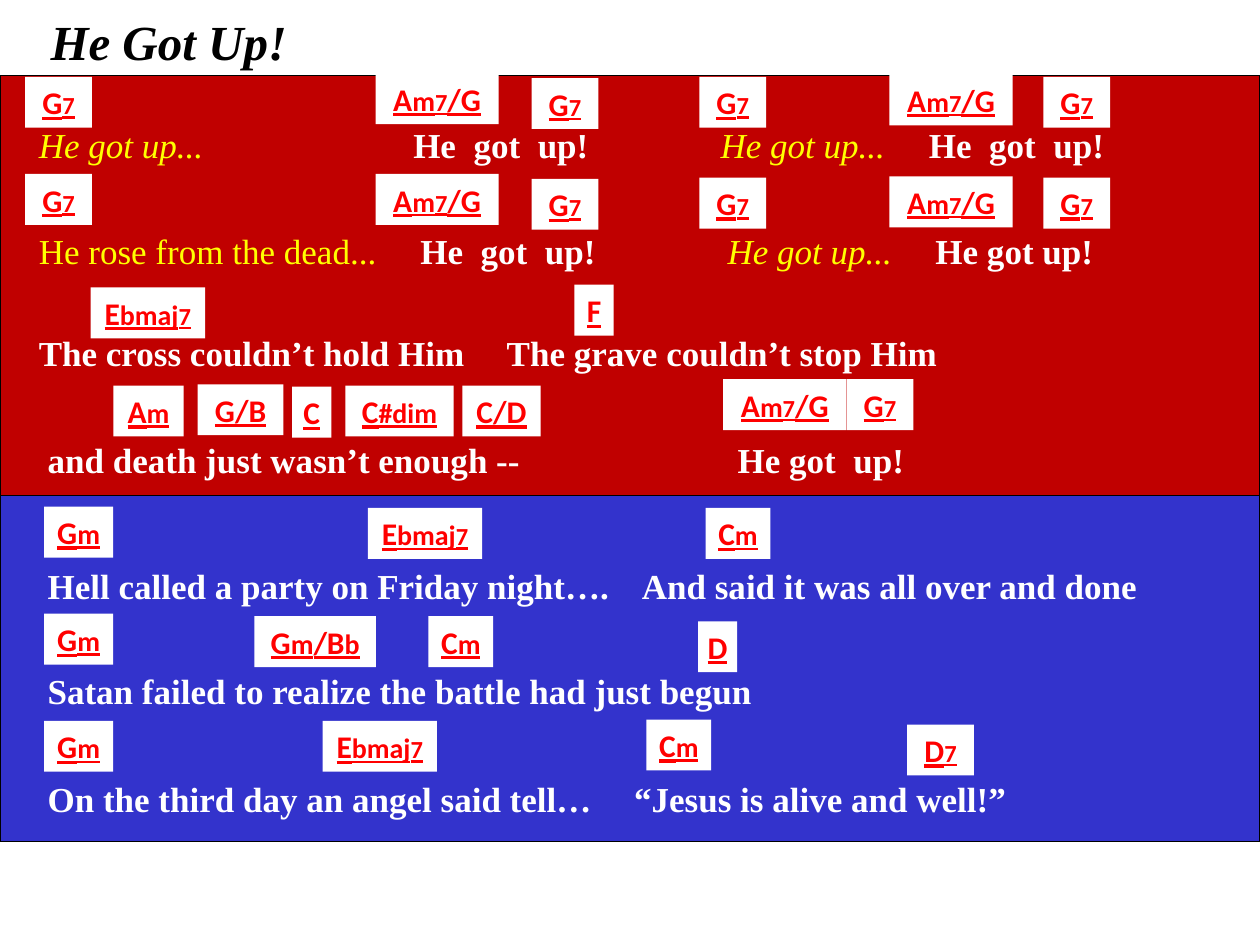
from dataclasses import dataclass
from itertools import groupby

from lxml import etree
from pptx import Presentation
from pptx.dml.color import RGBColor
from pptx.enum.shapes import MSO_SHAPE
from pptx.enum.text import MSO_ANCHOR, PP_ALIGN
from pptx.oxml.ns import qn
from pptx.util import Pt

RECT = MSO_SHAPE.RECTANGLE
MIDDLE = MSO_ANCHOR.MIDDLE
CENTER = PP_ALIGN.CENTER


@dataclass(frozen=True)
class Theme:
    red: RGBColor = RGBColor(0xC0, 0x00, 0x00)
    blue: RGBColor = RGBColor(0x33, 0x33, 0xCC)
    white: RGBColor = RGBColor(0xFF, 0xFF, 0xFF)
    black: RGBColor = RGBColor(0x00, 0x00, 0x00)
    yellow: RGBColor = RGBColor(0xFF, 0xFF, 0x00)
    chord: RGBColor = RGBColor(0xFF, 0x00, 0x00)
    lyric_font: str = "Times New Roman"
    chord_font: str = "Calibri"
    title_size: int = 28
    lyric_size: int = 20
    root_size: int = 18
    quality_size: int = 16
    digit_size: int = 14


T = Theme()
RESPONSE = (T.white, True, False)
CALL = (T.yellow, False, True)
PLAIN_CALL = (T.yellow, False, False)

CHORD_HEIGHT = 29.1
LYRIC_HEIGHT = 31.5
CHORD_WIDTHS = {
    "G7": 38.2, "D7": 38.2, "Am7/G": 70.4, "Ebmaj7": 65.4, "Am": 40.2,
    "C": 22.4, "F": 22.4, "D": 22.4, "C#dim": 62, "G/B": 49, "C/D": 44.8,
    "Gm": 39.5, "Cm": 37, "Gm/Bb": 69.5,
}

CHORUS = [
    (23.8,
     [(22.2, "He got up...", CALL), (236.2, "He  got  up!", RESPONSE),
      (411.8, "He got up...", CALL), (530.8, "He  got  up!", RESPONSE)],
     [(14.4, 0.7, "G7"), (214.6, -1.4, "Am7/G"), (303.8, 1.4, "G7"),
      (399.6, 0.7, "G7"), (508.3, -0.7, "Am7/G"), (596.2, 0.7, "G7")]),
    (84.2,
     [(22.2, "He rose from the dead...", PLAIN_CALL), (240.2, "He  got  up!", RESPONSE),
      (415.8, "He got up...", CALL), (534.6, "He got up!", RESPONSE)],
     [(14.4, 56.2, "G7"), (214.6, 56.2, "Am7/G"), (303.8, 59, "G7"),
      (399.6, 58.3, "G7"), (508.3, 57.6, "Am7/G"), (596.2, 58.3, "G7")]),
    (142.6,
     [(22.2, "The cross couldn’t hold Him", RESPONSE),
      (289.6, "The grave couldn’t stop Him", RESPONSE)],
     [(51.8, 121, "Ebmaj7"), (328.3, 119.5, "F")]),
    (203.8,
     [(27.2, "and death just wasn’t enough --", RESPONSE), (421.5, "He got  up!", RESPONSE)],
     [(64.8, 177.1, "Am"), (113, 176.4, "G/B"), (167, 177.8, "C"), (197.3, 177.1, "C#dim"),
      (264.2, 177.1, "C/D"), (413.3, 173.5, "Am7/G"), (483.8, 173.5, "G7")]),
]

VERSE = [
    (36,
     [(27.2, "Hell called a party on Friday night….", RESPONSE),
      (366.8, "And said it was all over and done", RESPONSE)],
     [(25.2, 6.5, "Gm"), (210.2, 7.2, "Ebmaj7"), (403.2, 7.2, "Cm")]),
    (95.8,
     [(27.2, "Satan failed to realize the battle had just begun", RESPONSE)],
     [(25.2, 67.7, "Gm"), (145.4, 69.1, "Gm/Bb"), (244.8, 69.1, "Cm"), (398.9, 72, "D")]),
    (157.7,
     [(27.2, "On the third day an angel said tell…", RESPONSE),
      (362.4, "“Jesus is alive and well!”", RESPONSE)],
     [(25.2, 128.9, "Gm"), (184.3, 128.9, "Ebmaj7"), (369.4, 128.2, "Cm"), (518.4, 131, "D7")]),
]


def add_rect(s, x, y, w, h, fill, line=None):
    sp = s.shapes.add_shape(RECT, Pt(x), Pt(y), Pt(w), Pt(h))
    sp.shadow.inherit = False
    sp.fill.solid()
    sp.fill.fore_color.rgb = fill
    if line is None:
        sp.line.fill.background()
    else:
        sp.line.color.rgb = line
        sp.line.width = Pt(0.75)
    return sp


def add_title(s, x, y, w, h, text):
    tf = s.shapes.add_textbox(Pt(x), Pt(y), Pt(w), Pt(h)).text_frame
    tf.word_wrap = True
    tf.margin_left = Pt(28.2)
    p = tf.paragraphs[0]
    p.text = text
    p.font.name, p.font.size = T.lyric_font, Pt(T.title_size)
    p.font.bold = p.font.italic = True
    p.font.color.rgb = T.black


def set_tabs(p, stops):
    tabs = etree.Element(qn("a:tabLst"))
    for stop in stops:
        etree.SubElement(tabs, qn("a:tab"), pos=str(int(Pt(stop))), algn="l")
    p._p.get_or_add_pPr().insert(0, tabs)


def add_lyric(s, x, y, w, phrases):
    tf = s.shapes.add_textbox(Pt(x), Pt(y), Pt(w), Pt(LYRIC_HEIGHT)).text_frame
    tf.word_wrap = True
    start = phrases[0][0]
    tf.margin_left = Pt(start)
    p = tf.paragraphs[0]
    p.font.name, p.font.size = T.lyric_font, Pt(T.lyric_size)
    if len(phrases) > 1:
        set_tabs(p, [left - start for left, _, _ in phrases[1:]])
    for i, (_, text, (color, bold, italic)) in enumerate(phrases):
        r = p.add_run()
        r.text = "\t" + text if i else text
        r.font.color.rgb = color
        r.font.bold, r.font.italic = bold, italic


def chord_size(char):
    if char.isdigit():
        return T.digit_size
    return T.root_size if char.isupper() or char == "/" else T.quality_size


def add_chord(s, x, y, name):
    tf = add_rect(s, x, y, CHORD_WIDTHS[name], CHORD_HEIGHT, T.white).text_frame
    tf.word_wrap = False
    tf.vertical_anchor = MIDDLE
    p = tf.paragraphs[0]
    p.alignment = CENTER
    p.font.name = T.chord_font
    p.font.bold = p.font.underline = True
    p.font.color.rgb = T.chord
    for size, chars in groupby(name, chord_size):
        r = p.add_run()
        r.text = "".join(chars)
        r.font.size = Pt(size)


def add_section(s, x, y, w, h, fill, lines):
    add_rect(s, x, y, w, h, fill, T.black)
    for lyric_y, phrases, chords in lines:
        add_lyric(s, x, y + lyric_y, w, phrases)
        for chord_x, chord_y, name in chords:
            add_chord(s, x + chord_x, y + chord_y, name)


def main():
    prs = Presentation()
    prs.slide_width, prs.slide_height = Pt(720), Pt(540)
    s = prs.slides.add_slide(prs.slide_layouts[6])
    add_title(s, 0.7, 2.9, 720, 41, "He Got Up!")
    add_section(s, 0, 43.2, 720, 239.8, T.red, CHORUS)
    add_section(s, 0, 283, 720, 198, T.blue, VERSE)
    prs.save("out.pptx")


if __name__ == "__main__":
    main()
